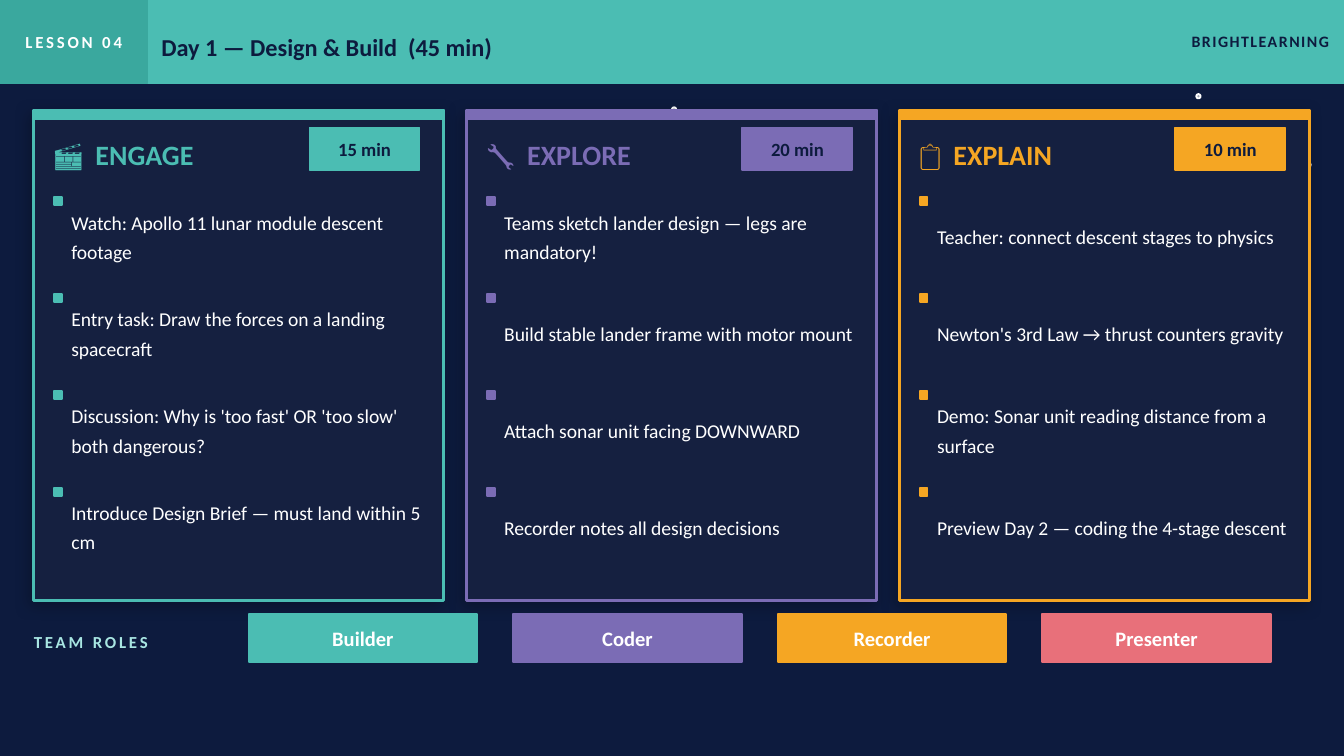
from dataclasses import dataclass

from lxml.etree import SubElement
from pptx import Presentation
from pptx.dml.color import RGBColor
from pptx.enum.shapes import MSO_SHAPE
from pptx.enum.text import MSO_ANCHOR, PP_ALIGN
from pptx.oxml.ns import qn
from pptx.util import Cm, Pt


@dataclass(frozen=True)
class Theme:
    font: str = "Calibri"
    night: str = "0D1B3E"
    panel: str = "152040"
    teal: str = "4BBDB3"
    deep: str = "3AA89E"
    mint: str = "A8E6E2"
    purple: str = "7B6CB5"
    amber: str = "F5A623"
    coral: str = "E8707A"
    white: str = "FFFFFF"
    brand: float = 8.5
    label: float = 9
    badge: float = 10
    body: float = 10.5
    role: float = 11
    title: float = 13
    head: float = 15


THEME = Theme()

STARS = [(12.7, 2.03, 0.08, 65), (22.61, 1.78, 0.08, 60), (24.64, 3.05, 0.13, 50)]

CARDS = [
    ("🎬  ENGAGE", "15 min", THEME.teal, [
        "Watch: Apollo 11 lunar module descent footage",
        "Entry task: Draw the forces on a landing spacecraft",
        "Discussion: Why is 'too fast' OR 'too slow' both dangerous?",
        "Introduce Design Brief — must land within 5 cm",
    ]),
    ("🔧  EXPLORE", "20 min", THEME.purple, [
        "Teams sketch lander design — legs are mandatory!",
        "Build stable lander frame with motor mount",
        "Attach sonar unit facing DOWNWARD",
        "Recorder notes all design decisions",
    ]),
    ("📋  EXPLAIN", "10 min", THEME.amber, [
        "Teacher: connect descent stages to physics",
        "Newton's 3rd Law → thrust counters gravity",
        "Demo: Sonar unit reading distance from a surface",
        "Preview Day 2 — coding the 4-stage descent",
    ]),
]

ROLES = [
    ("Builder", THEME.teal),
    ("Coder", THEME.purple),
    ("Recorder", THEME.amber),
    ("Presenter", THEME.coral),
]


def apply(target, values):
    for name, value in values.items():
        setattr(target, name, value)


class Board:
    """Holds the theme and the slide that is being drawn."""

    def __init__(self, slide, theme):
        self.slide = slide
        self.theme = theme
        back = slide.background.fill
        back.solid()
        back.fore_color.rgb = RGBColor.from_string(theme.night)

    def box(self, x, y, w, h, fill, line=None, width=1, kind=MSO_SHAPE.RECTANGLE):
        shape = self.slide.shapes.add_shape(kind, Cm(x), Cm(y), Cm(w), Cm(h))
        shape.shadow.inherit = False
        shape.fill.solid()
        shape.fill.fore_color.rgb = RGBColor.from_string(fill)
        shape.line.color.rgb = RGBColor.from_string(line or fill)
        shape.line.width = Pt(width)
        return shape

    def star(self, x, y, size, alpha):
        dot = self.box(x, y, size, size, self.theme.white, kind=MSO_SHAPE.OVAL)
        tint = dot._element.spPr.find(qn("a:solidFill")).find(qn("a:srgbClr"))
        SubElement(tint, qn("a:alpha"), val=str(alpha * 1000))

    def shade(self, shape):
        """Give the shape a soft outer shadow."""
        effect = shape._element.spPr.find(qn("a:effectLst"))
        outer = SubElement(effect, qn("a:outerShdw"), blurRad=str(Pt(8)),
                           dist=str(Pt(3)), dir=str(135 * 60000),
                           algn="bl", rotWithShape="0")
        tint = SubElement(outer, qn("a:srgbClr"), val="000000")
        SubElement(tint, qn("a:alpha"), val="25000")

    def label(self, shape, words, size, color, bold=True, align=PP_ALIGN.LEFT,
              lead=None, track=0, top=0, right=0):
        """Fill the shape with one paragraph, centred in height."""
        frame = shape.text_frame
        apply(frame, {
            "word_wrap": True,
            "vertical_anchor": MSO_ANCHOR.MIDDLE,
            "margin_left": 0,
            "margin_top": Cm(top),
            "margin_right": Cm(right),
            "margin_bottom": 0,
        })
        para = frame.paragraphs[0]
        apply(para, {"alignment": align, "line_spacing": lead})
        run = para.add_run()
        run.text = words
        apply(run.font, {"name": self.theme.font, "size": Pt(size), "bold": bold})
        run.font.color.rgb = RGBColor.from_string(color)
        if track:
            run._r.get_or_add_rPr().set("spc", str(int(track * 100)))

    def text(self, x, y, w, h, words, size, color, **style):
        area = self.slide.shapes.add_textbox(Cm(x), Cm(y), Cm(w), Cm(h))
        self.label(area, words, size, color, **style)

    def chip(self, x, y, w, h, words, size, color, fill, **style):
        """Draw a filled box with centred text."""
        self.label(self.box(x, y, w, h, fill), words, size, color,
                   align=PP_ALIGN.CENTER, **style)

    def header(self):
        t, high = self.theme, 1.57
        self.box(0, 0, 25.4, high, t.teal)
        self.chip(0, 0, 2.79, high, "LESSON 04", t.label, t.white, t.deep, track=1.5)
        self.text(3.05, 0, 19.05, high, "Day 1 — Design & Build  (45 min)",
                  t.title, t.night, top=0.2)
        self.text(19.56, 0, 5.84, high, "BRIGHTLEARNING", t.brand, t.night,
                  align=PP_ALIGN.RIGHT, track=0.8, right=0.28)

    def card(self, x, head, time, color, items):
        t, top, wide = self.theme, 2.08, 7.75
        self.shade(self.box(x, top, wide, 9.27, t.panel, color, 1.5))
        self.box(x, top, wide, 0.18, color)
        self.text(x + 0.38, 2.39, 5.84, 1.07, head, t.head, color)
        self.chip(x + 5.21, 2.41, 2.08, 0.81, time, t.badge, t.night, color)
        for row, item in enumerate(items):
            y = 3.56 + row * 1.83
            self.box(x + 0.38, y + 0.17, 0.15, 0.15, color)
            self.text(x + 0.71, y, 6.68, 1.73, item, t.body, t.white,
                      bold=False, lead=1.25)

    def roles(self, roles):
        t = self.theme
        self.text(0.64, 11.68, 3.81, 0.89, "TEAM ROLES", t.label, t.mint, track=1.5)
        for col, (name, color) in enumerate(roles):
            self.chip(4.7 + col * 5, 11.61, 4.32, 0.91, name, t.role, t.white, color)


def main():
    deck = Presentation()
    apply(deck, {"slide_width": Cm(25.4), "slide_height": Cm(14.29)})
    board = Board(deck.slides.add_slide(deck.slide_layouts[6]), THEME)
    for star in STARS:
        board.star(*star)
    board.header()
    for col, card in enumerate(CARDS):
        board.card(0.64 + col * 8.18, *card)
    board.roles(ROLES)
    deck.save("out.pptx")


if __name__ == "__main__":
    main()
